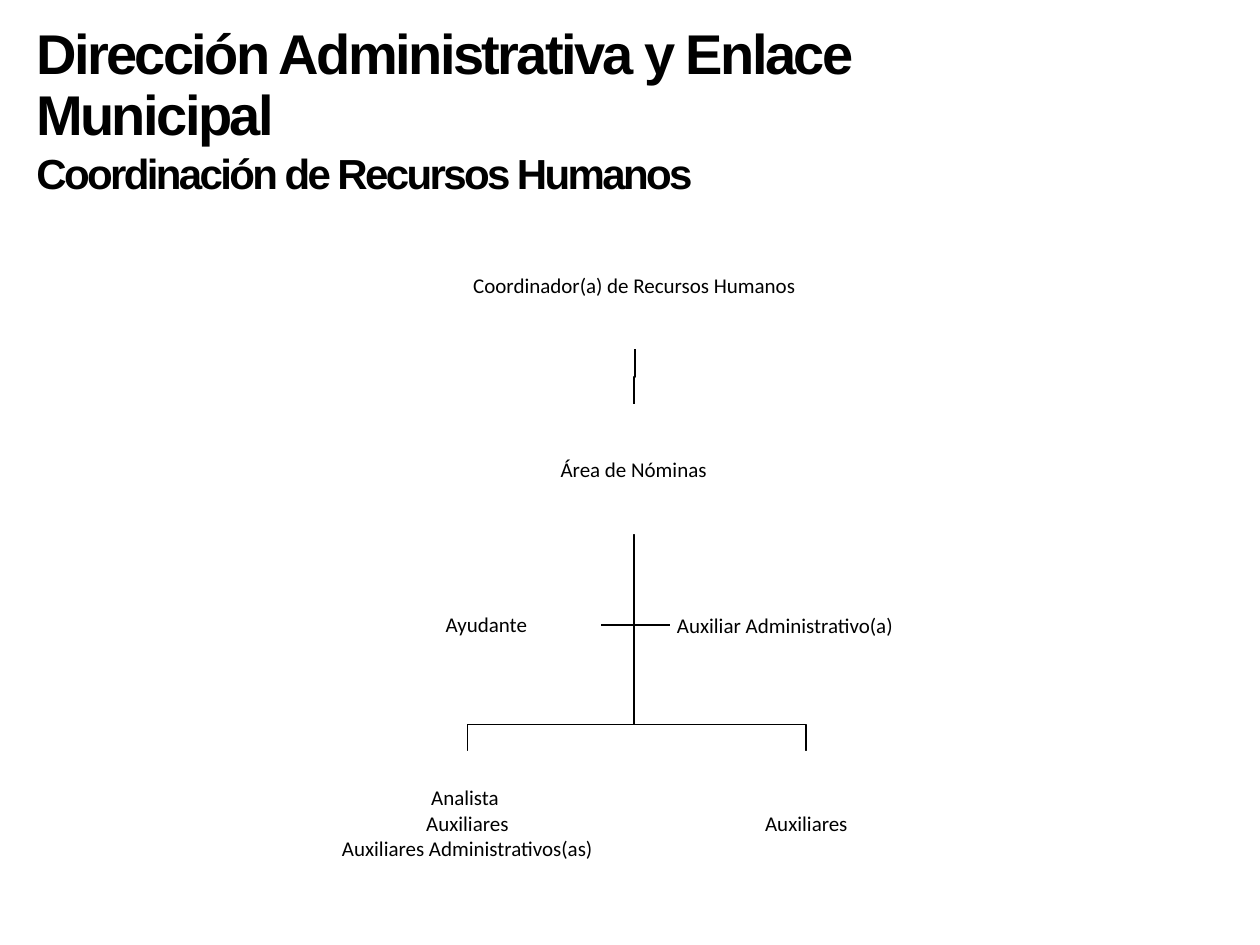
from pptx import Presentation
from pptx.dml.color import RGBColor
from pptx.enum.shapes import MSO_SHAPE
from pptx.enum.text import MSO_ANCHOR, PP_ALIGN
from pptx.util import Inches, Pt

COLORS = {"ink": "000000", "paper": "FFFFFF"}
ink = RGBColor.from_string(COLORS["ink"])
paper = RGBColor.from_string(COLORS["paper"])

deck = Presentation()
deck.slide_width, deck.slide_height = Inches(10), Inches(7.5)
slide = deck.slides.add_slide(deck.slide_layouts[6])
shapes = slide.shapes

# Heading
head = shapes.add_textbox(Inches(0.19), Inches(0.16), Inches(7.46), Inches(1.47))
frame = head.text_frame
frame.word_wrap = True
frame.text = "Dirección Administrativa y Enlace Municipal\nCoordinación de Recursos Humanos"
for para, size in zip(frame.paragraphs, (32, 24)):
    para.font.name = "Arial"
    para.font.size = Pt(size)
    para.font.bold = True
    para.font.color.rgb = ink
    for run in para.runs:
        run.font._element.set("spc", "-150")
frame.paragraphs[0].line_spacing = 0.9

# Branches of the chart
trunk, top, bar, foot = 5.03, 4.24, 5.75, 5.96
start = (trunk, top)
branches = [
    [start, (trunk, 4.96), (5.32, 4.96)],
    [start, (trunk, 4.96), (4.77, 4.96)],
    [start, (trunk, bar), (6.4, bar), (6.4, foot)],
    [start, (trunk, bar), (3.71, bar), (3.71, foot)],
    [(5.04, 2.77), (5.04, 2.99), (trunk, 2.99), (trunk, 3.21)],
]
for branch in branches:
    points = [(Inches(x), Inches(y)) for x, y in branch]
    pen = shapes.build_freeform(*points[0])
    pen.add_line_segments(points[1:], close=False)
    line = pen.convert_to_shape()
    line.shadow.inherit = False
    line.fill.background()
    line.line.color.rgb = ink
    line.line.width = Pt(1)

# Posts: left, top, width, height, text
posts = [
    (3.63, 1.76, 2.81, 1.01, "Coordinador(a) de Recursos Humanos"),
    (4, 3.21, 2.06, 1.03, "Área de Nóminas"),
    (2.46, foot, 2.5, 1.14, "Analista \nAuxiliares\nAuxiliares Administrativos(as)"),
    (5.15, foot, 2.5, 1.14, "Auxiliares"),
    (2.95, 4.5, 1.82, 0.91, "Ayudante"),
    (5.32, 4.51, 1.82, 0.91, "Auxiliar Administrativo(a)"),
]
for *place, text in posts:
    box = shapes.add_shape(MSO_SHAPE.RECTANGLE, *map(Inches, place))
    box.shadow.inherit = False
    box.fill.solid()
    box.fill.fore_color.rgb = paper
    box.line.fill.background()
    frame = box.text_frame
    frame.word_wrap = True
    frame.vertical_anchor = MSO_ANCHOR.MIDDLE
    frame.margin_left = frame.margin_right = Inches(0.01)
    frame.margin_top = frame.margin_bottom = Inches(0.01)
    frame.text = text
    for para in frame.paragraphs:
        para.alignment = PP_ALIGN.CENTER
        para.font.name = "Calibri"
        para.font.size = Pt(12)
        para.font.color.rgb = ink

deck.save("out.pptx")
